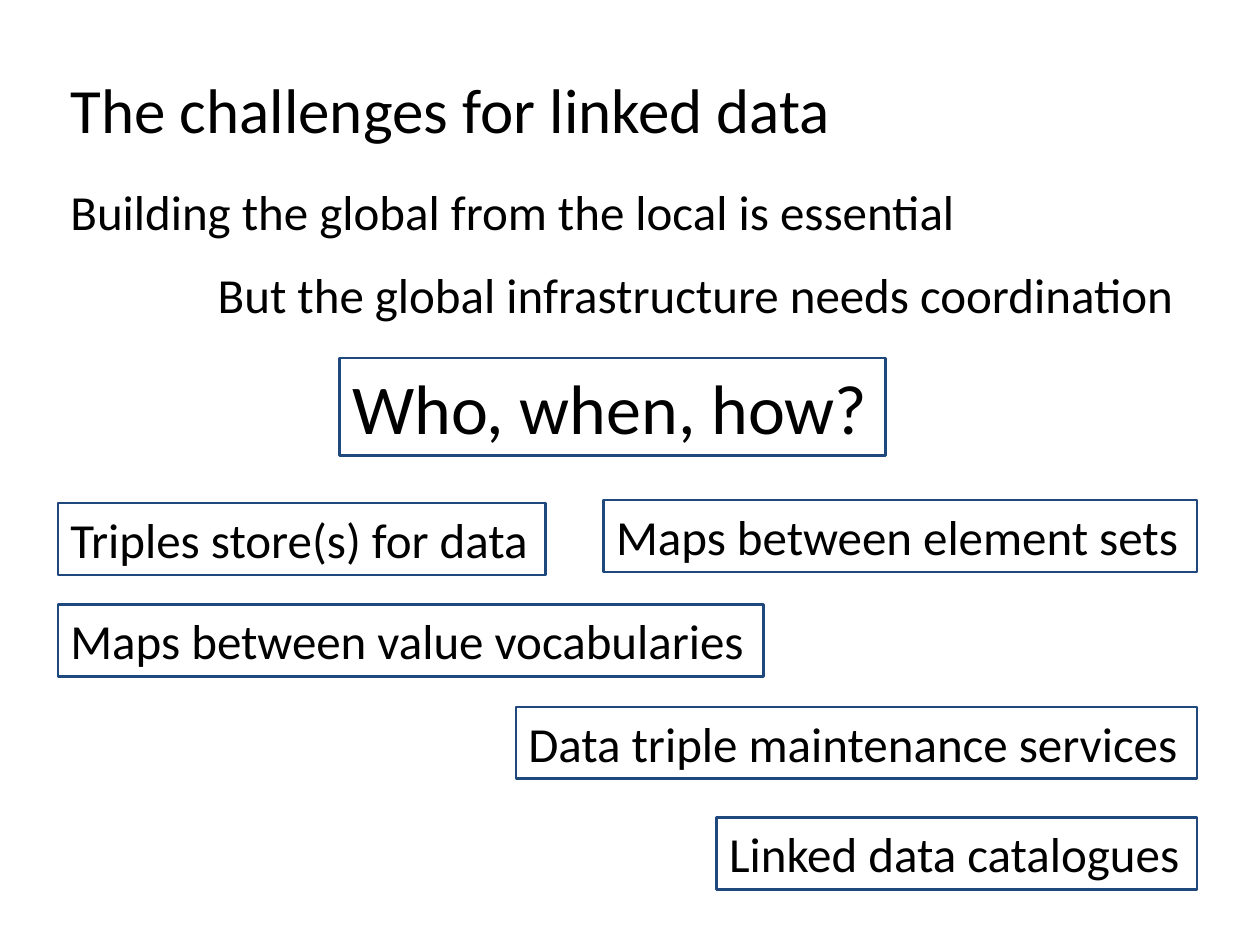
import pptx
import pptx.util
import pptx.dml.color
import pptx.enum.text

Cm = pptx.util.Cm
Pt = pptx.util.Pt
BLACK = pptx.dml.color.RGBColor(0x00, 0x00, 0x00)
NAVY = pptx.dml.color.RGBColor(0x1F, 0x49, 0x7D)
FRAME = {
    "word_wrap": False,
    "auto_size": pptx.enum.text.MSO_AUTO_SIZE.SHAPE_TO_FIT_TEXT,
    "vertical_anchor": pptx.enum.text.MSO_ANCHOR.TOP,
}
FONT = {"name": "Calibri", "bold": False}


def set_attrs(obj, values):
    for name, value in values.items():
        setattr(obj, name, value)


def write(sp, text, size, box):
    set_attrs(sp, dict(zip(("left", "top", "width", "height"), map(Cm, box))))
    tf = sp.text_frame
    set_attrs(tf, FRAME)
    p = tf.paragraphs[0]
    p.alignment = pptx.enum.text.PP_ALIGN.LEFT
    r = p.add_run()
    r.text = text
    set_attrs(r.font, FONT)
    r.font.size = Pt(size)
    r.font.color.rgb = BLACK


prs = pptx.Presentation()
prs.slide_width = Cm(25.4)
prs.slide_height = Cm(19.05)
s = prs.slides.add_slide(prs.slide_layouts[5])

write(s.shapes.title, "The challenges for linked data", 36, (1.17, 1.3, 15.98, 1.8))

statements = [
    ("Building the global from the local is essential", 1.17, 3.53, 18.64),
    ("But the global infrastructure needs coordination", 4.14, 5.21, 19.99),
]
for text, left, top, width in statements:
    sp = s.shapes.add_textbox(0, 0, 0, 0)
    write(sp, text, 28, (left, top, width, 1.45))

boxes = [
    ("Triples store(s) for data", 28, 1.17, 10.14, 9.83, 1.45),
    ("Maps between element sets", 28, 12.17, 10.08, 11.96, 1.45),
    ("Maps between value vocabularies", 28, 1.17, 12.19, 14.22, 1.45),
    ("Data triple maintenance services", 28, 10.4, 14.25, 13.73, 1.45),
    ("Linked data catalogues", 28, 14.45, 16.48, 9.68, 1.45),
    ("Who, when, how?", 40, 6.85, 7.22, 11, 1.96),
]
for text, size, *box in boxes:
    sp = s.shapes.add_textbox(0, 0, 0, 0)
    write(sp, text, size, box)
    sp.line.color.rgb = NAVY
    sp.line.width = Pt(1.5)

prs.save("out.pptx")
